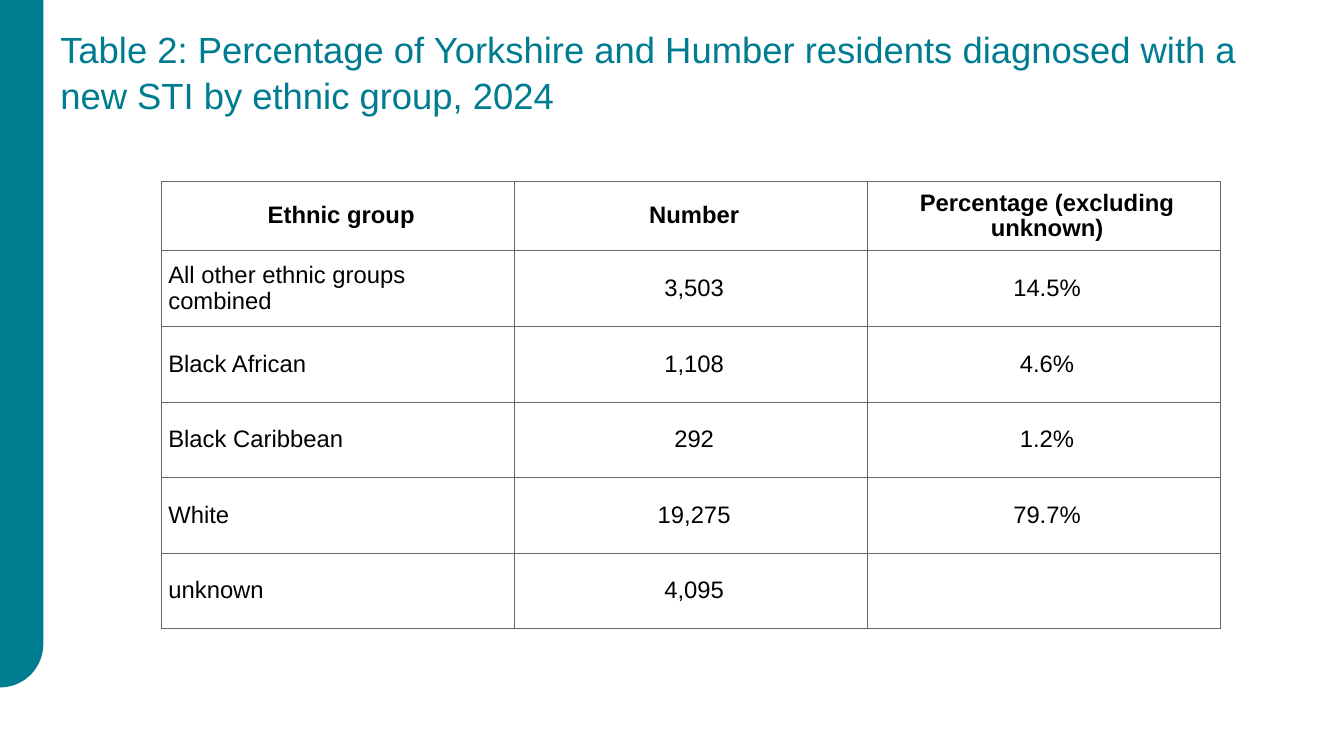
from math import cos, pi, sin

from lxml.etree import SubElement
from pptx import Presentation
from pptx.dml.color import RGBColor
from pptx.enum.text import MSO_ANCHOR as Anchor, PP_ALIGN as Align
from pptx.oxml.ns import qn
from pptx.util import Emu, Pt

PX = 9144  # 100 px to the inch
FONT = "Arial"
COLOURS = {"teal": "007C91", "text": "000000", "border": "666666"}

TITLE = ("Table 2: Percentage of Yorkshire and Humber residents diagnosed "
         "with a new STI by ethnic group, 2024")
ROWS = [
    ("Ethnic group", "Number", "Percentage (excluding unknown)"),
    ("All other ethnic groups combined", "3,503", "14.5%"),
    ("Black African", "1,108", "4.6%"),
    ("Black Caribbean", "292", "1.2%"),
    ("White", "19,275", "79.7%"),
    ("unknown", "4,095", ""),
]


def px(length):
    return Emu(round(length * PX))


def write(frame, text, size, colour="text", bold=False, align=Align.LEFT, spacing=1.0):
    para = frame.paragraphs[0]
    para.alignment = align
    para.line_spacing = spacing
    para.font.size = Pt(size)
    if text:
        span = para.add_run()
        span.text = text
        span.font.name = FONT
        span.font.size = Pt(size)
        span.font.bold = bold
        span.font.color.rgb = RGBColor.from_string(COLOURS[colour])


class SlideBuilder:
    def __init__(self, deck):
        self.page = deck.slides.add_slide(deck.slide_layouts[6])

    def side_band(self, width, height, steps=24):
        """Band on the left edge whose lower right corner is a quarter circle."""
        angles = [pi / 2 * step / steps for step in range(steps + 1)]
        corner = [(px(width * cos(angle)), px(height - width + width * sin(angle)))
                  for angle in angles]
        builder = self.page.shapes.build_freeform(0, 0)
        builder.add_line_segments([(px(width), 0), *corner], close=True)
        band = builder.convert_to_shape()
        band.shadow.inherit = False
        band.fill.solid()
        band.fill.fore_color.rgb = RGBColor.from_string(COLOURS["teal"])
        band.line.fill.background()

    def title(self, text, left, top, width, height):
        box = self.page.shapes.add_textbox(px(left), px(top), px(width), px(height))
        box.text_frame.word_wrap = True
        write(box.text_frame, text, 26, colour="teal", spacing=1.05)

    def border(self, cell):
        properties = cell._tc.get_or_add_tcPr()
        for side in ("lnL", "lnR", "lnT", "lnB"):
            line = SubElement(properties, qn(f"a:{side}"), w=str(Pt(0.75)))
            fill = SubElement(line, qn("a:solidFill"))
            SubElement(fill, qn("a:srgbClr"), val=COLOURS["border"])

    def table(self, rows, left, top, column_width, header_height, row_height):
        columns = len(rows[0])
        height = header_height + row_height * (len(rows) - 1)
        table = self.page.shapes.add_table(
            len(rows), columns, px(left), px(top), px(column_width * columns), px(height)).table
        table.first_row = table.horz_banding = False
        for column in table.columns:
            column.width = px(column_width)
        for r, values in enumerate(rows):
            header = r == 0
            table.rows[r].height = px(header_height if header else row_height)
            for c, value in enumerate(values):
                cell = table.cell(r, c)
                self.border(cell)
                cell.fill.background()
                cell.vertical_anchor = Anchor.MIDDLE
                cell.margin_left = cell.margin_top = cell.margin_bottom = px(7)
                cell.margin_right = 0
                write(cell.text_frame, value, 17, bold=header,
                      align=Align.CENTER if header or c else Align.LEFT, spacing=0.97)


def main():
    deck = Presentation()
    deck.slide_width, deck.slide_height = px(1333), px(750)
    slide = SlideBuilder(deck)

    # Side band and title
    slide.side_band(43, 682)
    slide.title(TITLE, 50, 20, 1200, 46)

    # Ethnic group table
    slide.table(ROWS, 160, 180, column_width=350, header_height=66, row_height=75)

    deck.save("out.pptx")


if __name__ == "__main__":
    main()
